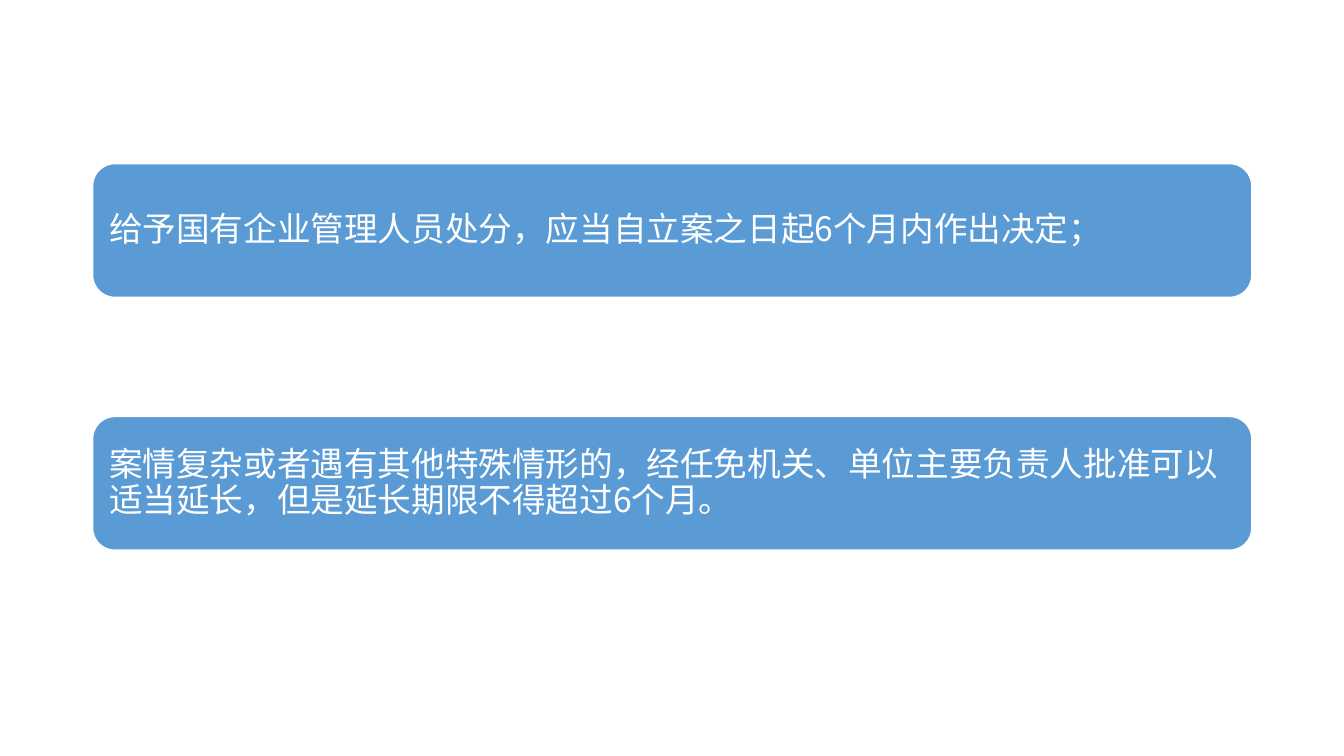
from lxml import etree
from pptx import Presentation
from pptx import util as u
from pptx.dml.color import RGBColor
from pptx.enum import shapes, text
from pptx.oxml.ns import qn

# Content
RULES = [
    "给予国有企业管理人员处分，应当自立案之日起6个月内作出决定；",
    "案情复杂或者遇有其他特殊情形的，经任免机关、单位主要负责人批准可以适当延长，但是延长期限不得超过6个月。",
]
COLORS = {"bar": "5B9BD5", "white": "FFFFFF"}
FONT = "Noto Sans CJK SC"

# Layout in points
WIDE, HIGH = 960, 540
LEFT, TOP = 66.2, 116.9
BAR_W, BAR_H = 828, 95.5
STEP = 180.6
INSET = 7.2


def color(name):
    return RGBColor.from_string(COLORS[name])


def add_bar(slide, top, words):
    bar = slide.shapes.add_shape(
        shapes.MSO_SHAPE.ROUNDED_RECTANGLE,
        u.Pt(LEFT), u.Pt(top), u.Pt(BAR_W), u.Pt(BAR_H))
    bar.shadow.inherit = False
    bar.fill.solid()
    bar.fill.fore_color.rgb = color("bar")
    bar.line.color.rgb = color("white")
    bar.line.width = u.Pt(1)

    # Text inside the bar
    frame = bar.text_frame
    frame.word_wrap = True
    frame.vertical_anchor = text.MSO_ANCHOR.MIDDLE
    frame.margin_left = frame.margin_right = u.Pt(INSET)
    frame.margin_top = frame.margin_bottom = u.Pt(INSET)
    para = frame.paragraphs[0]
    para.alignment = text.PP_ALIGN.LEFT
    para.line_spacing = 0.9
    run = para.add_run()
    run.text = words
    run.font.size = u.Pt(24)
    run.font.color.rgb = color("white")
    run.font.name = FONT
    # East Asian typeface
    etree.SubElement(run.font._element, qn("a:ea"), typeface=FONT)


def main():
    deck = Presentation()
    deck.slide_width, deck.slide_height = u.Pt(WIDE), u.Pt(HIGH)
    slide = deck.slides.add_slide(deck.slide_layouts[6])
    # Bars stacked at equal steps
    for i, words in enumerate(RULES):
        add_bar(slide, TOP + i * STEP, words)
    deck.save("out.pptx")


if __name__ == "__main__":
    main()
